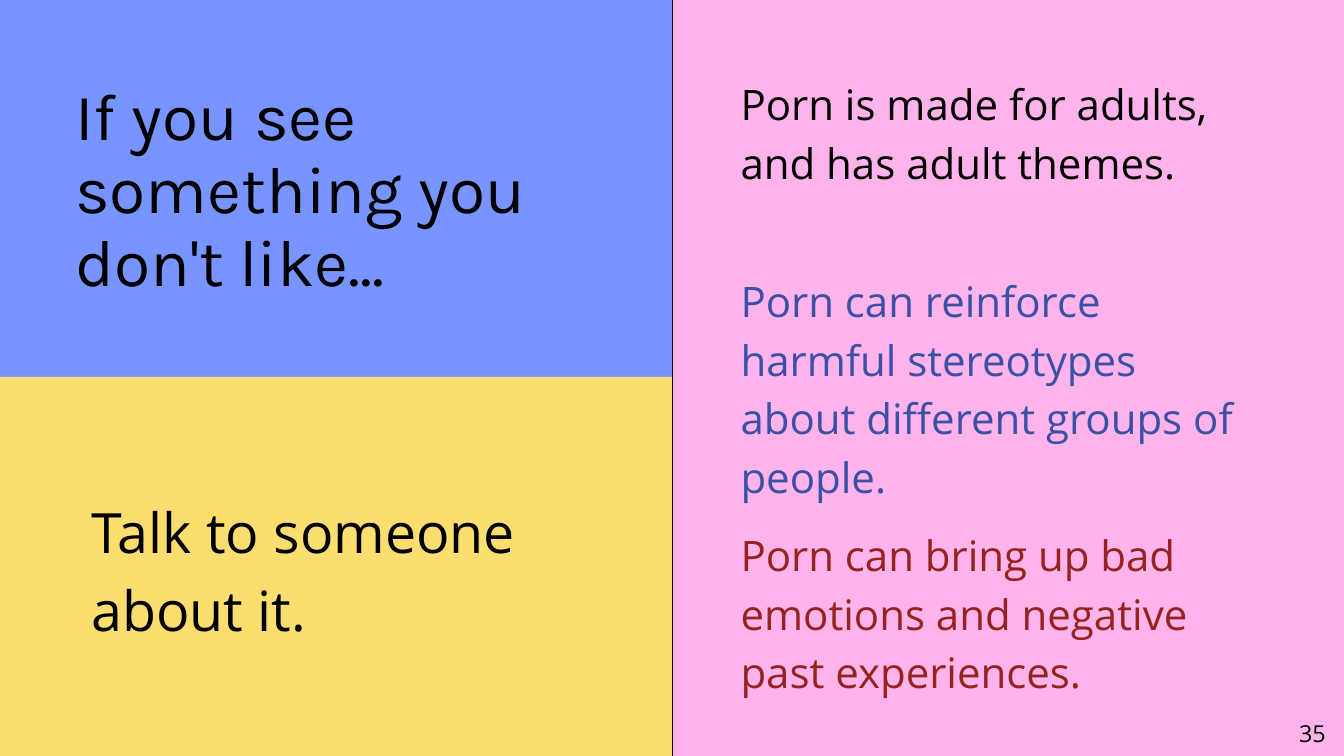
from lxml import etree
from pptx import Presentation
from pptx.dml.color import RGBColor
from pptx.enum import shapes, text
from pptx.oxml.ns import qn
from pptx.util import Inches, Pt

BLUE = RGBColor(0x78, 0x94, 0xFF)
YELLOW = RGBColor(0xFB, 0xDE, 0x70)
PINK = RGBColor(0xFE, 0xB3, 0xEB)
BLACK = RGBColor(0x00, 0x00, 0x00)
INDIGO = RGBColor(0x3A, 0x50, 0xA5)
RED = RGBColor(0x94, 0x22, 0x1E)

WIDTH, HEIGHT = 20, 11.25
MIDDLE_X, MIDDLE_Y = 10, 5.61


def write(shape, words, size, line_spacing=None, color=BLACK, font="Open Sans"):
    """Fill a shape with one left-aligned paragraph, without margins."""
    frame = shape.text_frame
    frame.text = words
    frame.word_wrap = True
    frame.auto_size = text.MSO_AUTO_SIZE.NONE
    frame.vertical_anchor = text.MSO_ANCHOR.TOP
    frame.margin_left = frame.margin_right = 0
    frame.margin_top = frame.margin_bottom = 0
    paragraph = frame.paragraphs[0]
    paragraph.alignment = text.PP_ALIGN.LEFT
    paragraph.space_before = Pt(0)
    if line_spacing:
        paragraph.line_spacing = Pt(line_spacing)
    paragraph.font.name = font
    paragraph.font.size = Pt(size)
    paragraph.font.color.rgb = color


presentation = Presentation()
presentation.slide_width = Inches(WIDTH)
presentation.slide_height = Inches(HEIGHT)
slide = presentation.slides.add_slide(presentation.slide_layouts[5])
slide.background.fill.solid()
slide.background.fill.fore_color.rgb = PINK

# Coloured panels on the left half, with the dividing lines under the yellow one
panels = []
for top, bottom, color in [(0, MIDDLE_Y, BLUE), (MIDDLE_Y, HEIGHT, YELLOW)]:
    panel = slide.shapes.add_shape(
        shapes.MSO_SHAPE.RECTANGLE,
        Inches(0), Inches(top), Inches(MIDDLE_X), Inches(bottom - top))
    panel.shadow.inherit = False
    panel.fill.solid()
    panel.fill.fore_color.rgb = color
    panel.line.fill.background()
    panels.append(panel)

for start_x, start_y, end_x, end_y in [(10.01, 0, 10.01, HEIGHT),
                                       (0, MIDDLE_Y, 10.01, MIDDLE_Y)]:
    divider = slide.shapes.add_connector(
        shapes.MSO_CONNECTOR.STRAIGHT,
        Inches(start_x), Inches(start_y), Inches(end_x), Inches(end_y))
    divider.line.color.rgb = BLACK
    divider.line.width = Pt(0.75)
    etree.SubElement(divider.element.spPr, qn("a:effectLst"))

# Bring the yellow panel above the lines, and the title above everything
title = slide.shapes.title
for shape in (panels[1], title):
    shape.element.getparent().append(shape.element)

title.left, title.top = Inches(1.12), Inches(1.19)
title.width, title.height = Inches(7.53), Inches(3.28)
write(title, "If you see something you don't like...", 70.7, 78.5, font="Karla")

advice = slide.shapes.add_textbox(Inches(1.36), Inches(7.24), Inches(7.29), Inches(2.26))
write(advice, "Talk to someone about it.", 59.5, 83.4)

statements = [
    (1.04, 2.55, BLACK, "Porn is made for adults, and has adult themes."),
    (3.97, 3.42, INDIGO,
     "Porn can reinforce harmful stereotypes about different groups of people."),
    (7.75, 2.55, RED, "Porn can bring up bad emotions and negative past experiences."),
]
for top, height, color, words in statements:
    statement = slide.shapes.add_textbox(
        Inches(11.02), Inches(top), Inches(7.36), Inches(height))
    write(statement, words, 45, 63, color)

page_number = slide.shapes.add_textbox(Inches(17.5), Inches(10.71), Inches(2.23), Inches(0.4))
write(page_number, "35", 25)
page_number.text_frame.vertical_anchor = text.MSO_ANCHOR.MIDDLE
page_number.text_frame.paragraphs[0].alignment = text.PP_ALIGN.RIGHT

presentation.save("out.pptx")
